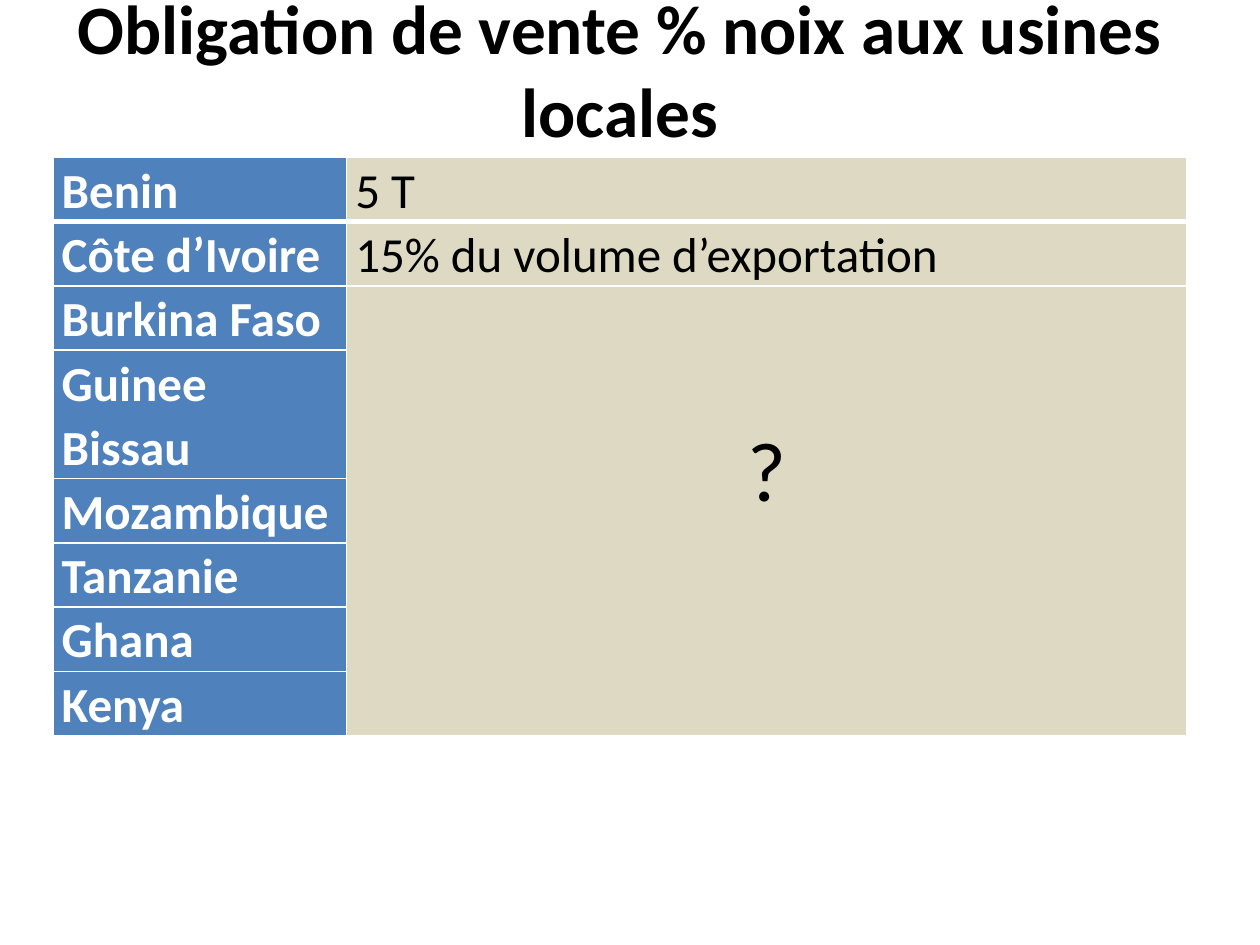
from lxml import etree
from pptx import Presentation
from pptx.dml.color import RGBColor
from pptx.enum import text
from pptx.oxml import parse_xml
from pptx.oxml.ns import nsdecls
from pptx.util import Inches, Pt

COLORS = {"country": "4F81BD", "rule": "DDD9C3", "light": "FFFFFF", "dark": "000000"}
FONT = "Calibri"


def format_text(paragraph, size, color, bold, align):
    paragraph.alignment = align
    font = paragraph.runs[0].font
    for key, value in {"name": FONT, "size": Pt(size), "bold": bold}.items():
        setattr(font, key, value)
    font.color.rgb = RGBColor.from_string(COLORS[color])


def set_borders(cell, widths):
    """Draw solid light borders; widths maps L, R, T, B to points."""
    properties = cell._tc.get_or_add_tcPr()
    for index, (side, width) in enumerate(widths.items()):
        line = parse_xml(
            f'<a:ln{side} {nsdecls("a")} w="{Pt(width)}"><a:solidFill>'
            f'<a:srgbClr val="{COLORS["light"]}"/></a:solidFill></a:ln{side}>'
        )
        properties.insert(index, line)


prs = Presentation()
prs.slide_width, prs.slide_height = Inches(10), Inches(7.5)
slide = prs.slides.add_slide(prs.slide_layouts[5])

# Title
title = slide.shapes.title
title_box = {"left": 0.42, "top": -0.08, "width": 9, "height": 1.25}
for side, length in title_box.items():
    setattr(title, side, Inches(length))
heading = title.text_frame
heading.text = "Obligation de vente % noix aux usines locales"
heading.auto_size = text.MSO_AUTO_SIZE.NONE
heading.vertical_anchor = text.MSO_ANCHOR.MIDDLE
format_text(heading.paragraphs[0], 39.6, "dark", True, text.PP_ALIGN.CENTER)

# Sales obligation per country
obligations = [
    ("Benin", "5 T"),
    ("Côte d’Ivoire", "15% du volume d’exportation"),
    ("Burkina Faso", "?"),
    ("Guinee Bissau", ""),
    ("Mozambique", ""),
    ("Tanzanie", ""),
    ("Ghana", ""),
    ("Kenya", ""),
]
LINE = 0.51
row_heights = [LINE * (2 if country == "Guinee Bissau" else 1) for country, _ in obligations]
table = slide.shapes.add_table(
    len(obligations), 2, Inches(0.42), Inches(1.25), Inches(9), Inches(sum(row_heights))
).table
table.first_row = table.horz_banding = False
for column, width in zip(table.columns, (2.33, 6.67)):
    column.width = Inches(width)
for row, height in zip(table.rows, row_heights):
    row.height = Inches(height)

# One shared cell for the countries without a known rule
table.cell(2, 1).merge(table.cell(len(obligations) - 1, 1))

for row, entries in enumerate(obligations):
    for column, entry in enumerate(entries):
        cell = table.cell(row, column)
        unknown = entry == "?"
        margins = {"left": 0.07, "right": 0.07, "top": 2 * LINE if unknown else 0, "bottom": 0}
        for side, length in margins.items():
            setattr(cell, f"margin_{side}", Inches(length))
        cell.fill.solid()
        cell.fill.fore_color.rgb = RGBColor.from_string(COLORS["rule" if column else "country"])
        set_borders(cell, {"L": 1, "R": 1, "T": 3 if row == 1 else 1, "B": 3 if row == 0 else 1})
        if entry:
            cell.text = entry
            paragraph = cell.text_frame.paragraphs[0]
            paragraph.line_spacing = 1.07
            format_text(
                paragraph,
                48 if unknown else 28,
                "dark" if column else "light",
                column == 0,
                text.PP_ALIGN.CENTER if unknown else text.PP_ALIGN.LEFT,
            )

prs.save("out.pptx")
